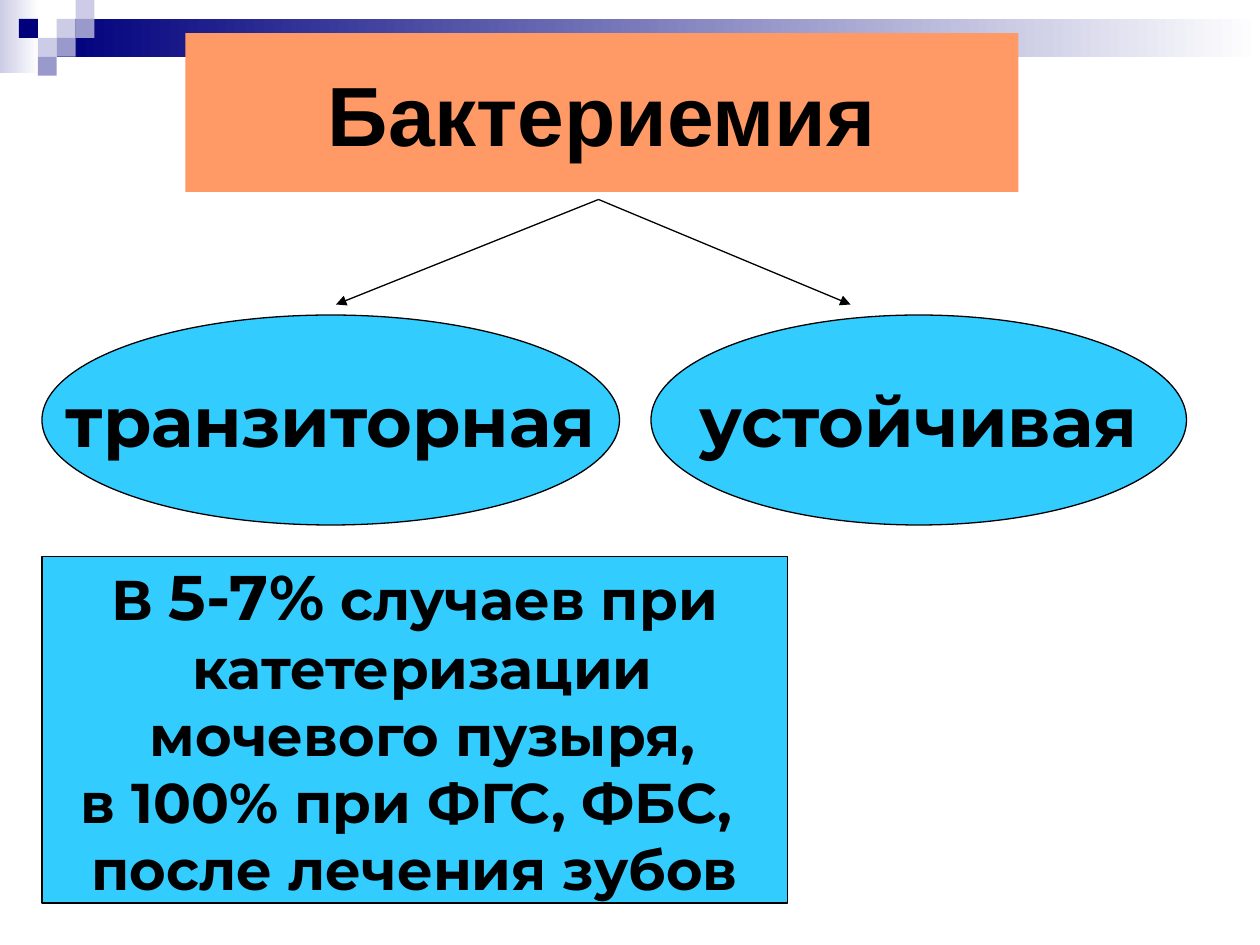
from dataclasses import dataclass

from lxml.etree import SubElement
from pptx import Presentation
from pptx.dml.color import RGBColor
from pptx.enum.shapes import MSO_CONNECTOR, MSO_SHAPE
from pptx.enum.text import MSO_ANCHOR, PP_ALIGN
from pptx.oxml.ns import qn
from pptx.util import Pt


@dataclass(frozen=True)
class Theme:
    navy: str = "00007D"
    lavender: str = "CCCCE6"
    violet: str = "9999CC"
    white: str = "FFFFFF"
    orange: str = "FF9966"
    sky: str = "33CCFF"
    black: str = "000000"
    title_font: str = "Arial"
    body_font: str = "Montserrat"
    title_size: int = 48
    kind_size: int = 40
    figure_size: int = 36
    note_size: int = 32
    outline: float = 0.75


THEME = Theme()


def rgb(value):
    return RGBColor.from_string(value)


def apply_format(target, values):
    for name, value in values.items():
        setattr(target, name, value)


def add_block(slide, box, color, form=MSO_SHAPE.RECTANGLE, outlined=False):
    block = slide.shapes.add_shape(form, *map(Pt, box))
    block.shadow.inherit = False
    block.fill.solid()
    block.fill.fore_color.rgb = rgb(color)
    if outlined:
        block.line.color.rgb = rgb(THEME.black)
        block.line.width = Pt(THEME.outline)
    else:
        block.line.fill.background()
    return block


def add_fade(slide, box, start):
    fade = add_block(slide, box, start)
    fade.fill.gradient()
    fade.fill.gradient_angle = 0
    for stop, color, position in zip(fade.fill.gradient_stops, (start, THEME.white), (0, 1)):
        stop.color.rgb = rgb(color)
        stop.position = position


def write_lines(block, lines, font, wrap=False):
    frame = block.text_frame
    apply_format(frame, {"word_wrap": wrap, "vertical_anchor": MSO_ANCHOR.MIDDLE})
    for index, pieces in enumerate(lines):
        line = frame.add_paragraph() if index else frame.paragraphs[0]
        line.alignment = PP_ALIGN.CENTER
        for words, size in pieces:
            piece = line.add_run()
            piece.text = words
            apply_format(piece.font, {"name": font, "size": Pt(size), "bold": True})
            piece.font.color.rgb = rgb(THEME.black)


def add_arrow(slide, start, end):
    arrow = slide.shapes.add_connector(MSO_CONNECTOR.STRAIGHT, *map(Pt, start + end))
    arrow.line.color.rgb = rgb(THEME.black)
    arrow.line.width = Pt(THEME.outline)
    SubElement(arrow.line._get_or_add_ln(), qn("a:tailEnd"), type="triangle")
    SubElement(arrow._element.spPr, qn("a:effectLst"))


def add_corner_mosaic(slide):
    tile = 10.8
    add_fade(slide, (0, 0, 22.3, 41.8), THEME.lavender)
    add_fade(slide, (32.4, tile, 687.6, 2 * tile), THEME.navy)
    tiles = (
        (3, 1, THEME.lavender),
        (4, 0, THEME.lavender),
        (4, 1, THEME.violet),
        (2, 2, THEME.lavender),
        (1, 1, THEME.navy),
        (3, 2, THEME.violet),
        (2, 3, THEME.violet),
    )
    for column, row, color in tiles:
        add_block(slide, (column * tile, row * tile, tile, tile), color)


def main():
    deck = Presentation()
    apply_format(deck, {"slide_width": Pt(720), "slide_height": Pt(540)})
    slide = deck.slides.add_slide(deck.slide_layouts[6])
    add_corner_mosaic(slide)

    title = add_block(slide, (106, 19, 476, 90.7), THEME.orange)
    write_lines(title, [[("Бактериемия", THEME.title_size)]], THEME.title_font, wrap=True)

    kinds = (
        ("транзиторная", 24, 330, 192),
        ("устойчивая", 372, 306, 486),
    )
    for label, left, width, _ in kinds:
        kind = add_block(slide, (left, 180, width, 120), THEME.sky, MSO_SHAPE.OVAL, True)
        write_lines(kind, [[(label, THEME.kind_size)]], THEME.body_font)
    for *_, arrow_tip in kinds:
        add_arrow(slide, (342, 114), (arrow_tip, 174))

    cases = add_block(slide, (24, 318, 426, 198), THEME.sky, outlined=True)
    note = THEME.note_size
    case_lines = [
        [("В ", note), ("5-7%", THEME.figure_size), (" случаев при", note)],
        [(" катетеризации", note)],
        [(" мочевого пузыря,", note)],
        [("в 100% при ФГС, ФБС, ", note)],
        [("после лечения зубов", note)],
    ]
    write_lines(cases, case_lines, THEME.body_font)

    deck.save("out.pptx")


if __name__ == "__main__":
    main()
